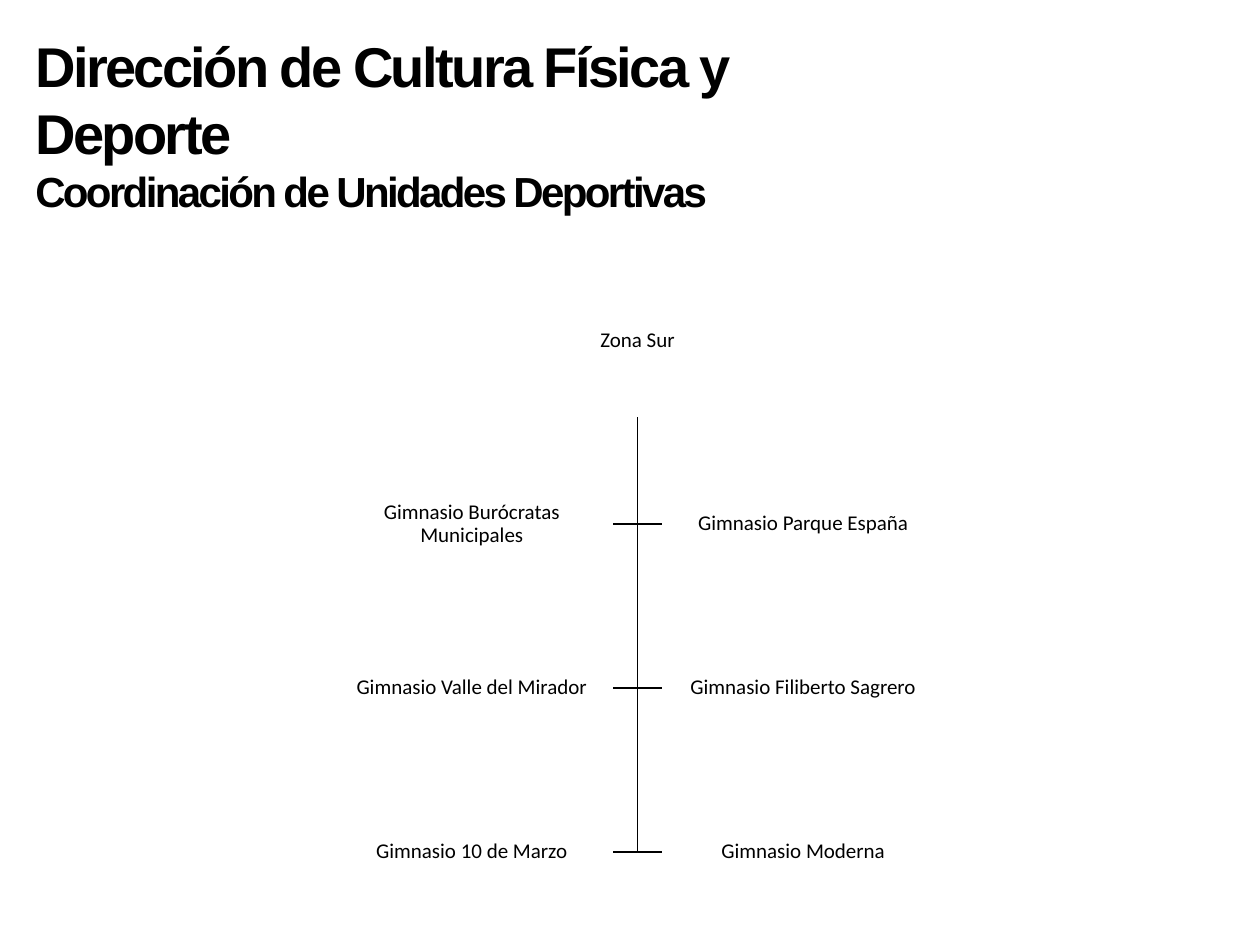
from pptx import Presentation
from pptx.dml.color import RGBColor
from pptx.enum.shapes import MSO_SHAPE
from pptx.enum.text import MSO_ANCHOR, MSO_AUTO_SIZE, PP_ALIGN
from pptx.util import Inches, Pt

BLACK = RGBColor(0x00, 0x00, 0x00)
WHITE = RGBColor(0xFF, 0xFF, 0xFF)

# Organisation chart grid, in inches
TRUNK_X, TRUNK_TOP = 5.06, 3.31
BRANCH = 0.195
GYM_W, GYM_H = 2.24, 0.92
FIRST_ROW, ROW_STEP = 4.16, 1.3
ZONE_W, ZONE_H = 2.58, 1.22

TITLE_LINES = [("Dirección de Cultura Física y Deporte", 32),
               ("Coordinación de Unidades Deportivas", 24)]
ZONE = "Zona Sur"
GYM_ROWS = [("Gimnasio Burócratas Municipales", "Gimnasio Parque España"),
            ("Gimnasio Valle del Mirador", "Gimnasio Filiberto Sagrero"),
            ("Gimnasio 10 de Marzo", "Gimnasio Moderna")]


def style_runs(paragraph, font_name, size, bold=False):
    for run in paragraph.runs:
        run.font.name = font_name
        run.font.size = Pt(size)
        run.font.bold = bold
        run.font.color.rgb = BLACK


def set_title(title):
    title.left, title.top = Inches(0.18), Inches(0.2)
    title.width, title.height = Inches(7.28), Inches(1.58)
    frame = title.text_frame
    frame.text = "\n".join(line for line, _ in TITLE_LINES)
    frame.word_wrap = True
    frame.auto_size = MSO_AUTO_SIZE.SHAPE_TO_FIT_TEXT
    frame.vertical_anchor = MSO_ANCHOR.TOP
    for paragraph, (_, size) in zip(frame.paragraphs, TITLE_LINES):
        paragraph.alignment = PP_ALIGN.LEFT
        style_runs(paragraph, "Arial", size, bold=True)
        for run in paragraph.runs:
            run._r.get_or_add_rPr().set("spc", "-150")


def add_branch(shapes, row_y, side):
    """Elbow from the foot of the zone to a gym; side is -1 left, 1 right."""
    builder = shapes.build_freeform(Inches(TRUNK_X), Inches(TRUNK_TOP))
    builder.add_line_segments(
        [(Inches(TRUNK_X), Inches(row_y)),
         (Inches(TRUNK_X + side * BRANCH), Inches(row_y))], close=False)
    branch = builder.convert_to_shape()
    branch.shadow.inherit = False
    branch.fill.background()
    branch.line.color.rgb = BLACK
    branch.line.width = Pt(1)


def add_box(shapes, text, center_x, center_y, width, height, filled=True):
    box = shapes.add_shape(
        MSO_SHAPE.RECTANGLE, Inches(center_x - width / 2),
        Inches(center_y - height / 2), Inches(width), Inches(height))
    box.shadow.inherit = False
    box.line.fill.background()
    if filled:
        box.fill.solid()
        box.fill.fore_color.rgb = WHITE
    else:
        box.fill.background()
    frame = box.text_frame
    frame.text = text
    frame.word_wrap = True
    frame.vertical_anchor = MSO_ANCHOR.MIDDLE
    frame.margin_left = frame.margin_right = Inches(0.01)
    frame.margin_top = frame.margin_bottom = Inches(0.01)
    paragraph = frame.paragraphs[0]
    paragraph.alignment = PP_ALIGN.CENTER
    paragraph.line_spacing = 0.9
    style_runs(paragraph, "Calibri", 12)


def main():
    prs = Presentation()
    prs.slide_width, prs.slide_height = Inches(10), Inches(7.5)
    slide = prs.slides.add_slide(prs.slide_layouts[5])
    set_title(slide.shapes.title)

    chart = slide.shapes.add_group_shape().shapes
    gyms = [(name, FIRST_ROW + row * ROW_STEP, side)
            for row, names in enumerate(GYM_ROWS)
            for name, side in zip(names, (-1, 1))]

    # Branches lie behind the boxes
    for _, row_y, side in reversed(gyms):
        add_branch(chart, row_y, side)

    # Zone at the head, gyms on both sides of the trunk
    add_box(chart, ZONE, TRUNK_X, TRUNK_TOP - ZONE_H / 2, ZONE_W, ZONE_H,
            filled=False)
    for name, row_y, side in gyms:
        add_box(chart, name, TRUNK_X + side * (BRANCH + GYM_W / 2), row_y,
                GYM_W, GYM_H)

    prs.save("out.pptx")


if __name__ == "__main__":
    main()
